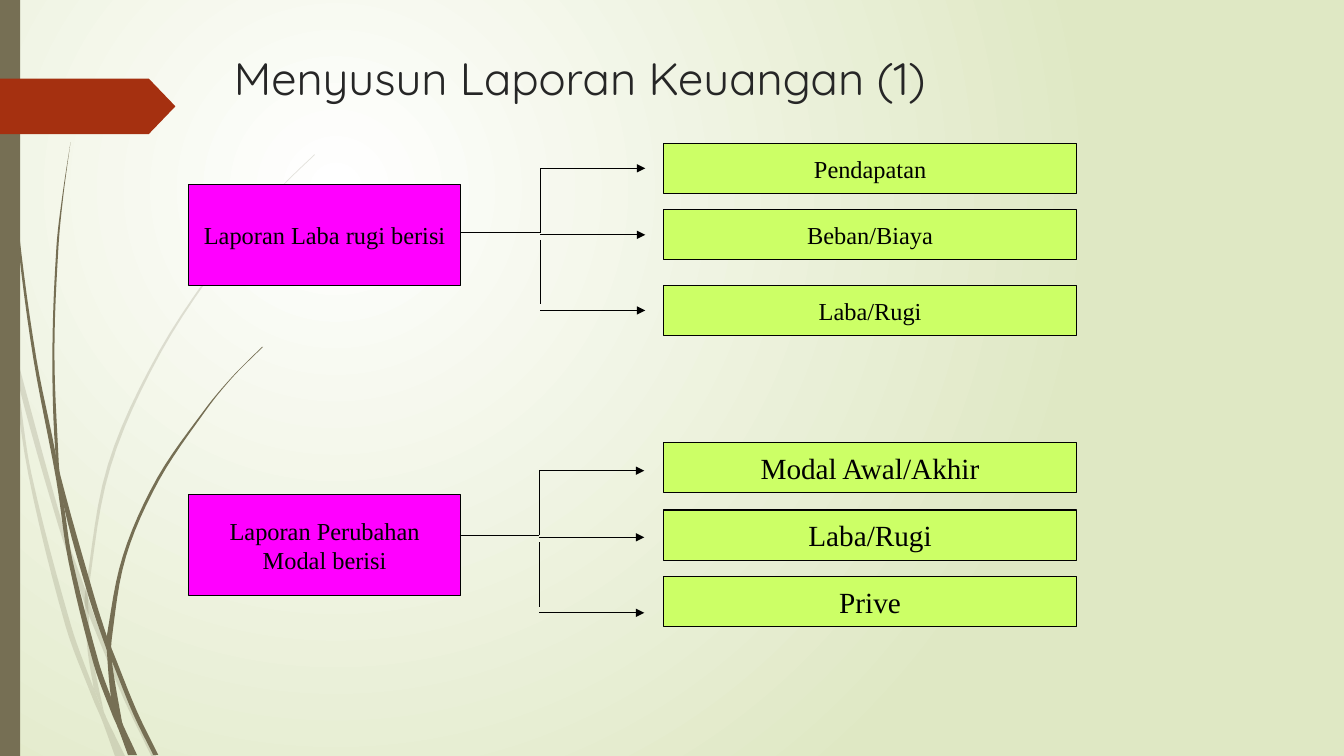
from lxml.etree import SubElement
from pptx import Presentation
from pptx.dml.color import RGBColor
from pptx.enum.shapes import MSO_CONNECTOR, MSO_SHAPE
from pptx.enum.text import MSO_ANCHOR, MSO_AUTO_SIZE, PP_ALIGN
from pptx.oxml.ns import qn
from pptx.util import Inches, Pt

COLORS = {
    "stem": "766F54", "tag": "A53010", "title": "262626", "ink": "000000",
    "report": "FF00FF", "item": "CCFF66", "glow": "FFFFFF", "meadow": "DFE8C4",
}
PALE_STEMS = [
    ([(0, 2.82), (0.09, 3.22), (0.11, 3.5), (0.17, 3.76), (0.31, 4.69), (0.7, 6.19),
      (0.93, 6.83), (1.05, 7.11), (1.24, 7.5)],
     [(0, 2.99), (0.1, 3.44), (0.11, 3.5), (0.28, 4.7), (0.65, 6.21), (0.92, 6.93),
      (1.01, 7.14), (1.14, 7.5)]),
    ([(0.14, 3.45), (0.62, 5.2), (0.85, 5.86), (0.92, 6.07), (1.27, 6.92), (1.55, 7.5)],
     [(0.14, 3.45), (0.17, 3.76), (0.58, 5.22), (0.84, 5.99), (0.88, 6.1), (1.23, 6.94),
      (1.5, 7.5)]),
    ([(3.12, 1.53), (2.89, 1.75), (2.68, 1.97), (2.28, 2.44), (1.58, 3.48), (1.07, 4.61),
      (0.85, 5.84), (0.84, 5.99), (0.87, 6.46), (0.93, 6.83)],
     [(3.12, 1.54), (2.9, 1.75), (2.68, 1.98), (2.29, 2.45), (1.6, 3.49), (1.1, 4.62),
      (0.88, 5.84), (0.88, 6.1), (0.91, 6.46), (1.03, 7.06), (1.05, 7.11)]),
]
DARK_STEMS = [
    ([(0.04, 0), (0.05, 0.48), (0.08, 1.09), (0.19, 2.32), (0.36, 3.55), (0.55, 4.49),
      (0.64, 5.05), (0.72, 5.56), (0.98, 6.57), (1.1, 6.91), (1.22, 7.19), (1.36, 7.49)],
     [(0.03, 0), (0.04, 0.48), (0.07, 1.1), (0.17, 2.33), (0.33, 3.55), (0.56, 4.77),
      (0.68, 5.57), (0.93, 6.59), (1.11, 7.08), (1.17, 7.22), (1.27, 7.49)]),
    ([(0.7, 1.41), (0.62, 1.93), (0.56, 2.45), (0.52, 3.49), (0.55, 4.49), (0.64, 5.05),
      (0.88, 5.92), (1.06, 6.45), (1.11, 6.56), (1.32, 7.08), (1.52, 7.49)],
     [(0.7, 1.41), (0.63, 1.93), (0.58, 2.45), (0.54, 3.49), (0.58, 4.53), (0.6, 4.72),
      (0.93, 5.9), (1.06, 6.31), (1.13, 6.49), (1.36, 7.06), (1.57, 7.49)]),
    ([(2.6, 3.44), (2.31, 3.73), (2.04, 4.05), (1.56, 4.74), (1.22, 5.51), (1.06, 6.31),
      (1.06, 6.45), (1.1, 6.91), (1.17, 7.22)],
     [(2.61, 3.44), (2.31, 3.74), (2.05, 4.06), (1.58, 4.76), (1.25, 5.52), (1.11, 6.33),
      (1.11, 6.56), (1.21, 7.16), (1.22, 7.19)]),
]
FRAME_FORMAT = {
    "auto_size": MSO_AUTO_SIZE.NONE,
    "margin_left": Inches(0.09), "margin_right": Inches(0.09),
    "margin_top": Inches(0.04), "margin_bottom": Inches(0.04),
}


def color(name):
    return RGBColor.from_string(COLORS[name])


def apply(target, values):
    for name, value in values.items():
        setattr(target, name, value)


def write(shape, text, align, font, size, ink, frame):
    apply(shape.text_frame, {**FRAME_FORMAT, **frame})
    para = shape.text_frame.paragraphs[0]
    para.alignment = align
    span = para.add_run()
    span.text = text
    apply(span.font, {"name": font, "size": Pt(size), "bold": False})
    span.font.color.rgb = color(ink)


def paint(shape, fill, outlined=False):
    shape.shadow.inherit = False
    shape.fill.solid()
    shape.fill.fore_color.rgb = color(fill)
    if outlined:
        shape.line.color.rgb = color("ink")
        shape.line.width = Pt(0.75)
    else:
        shape.line.fill.background()


def smooth_edge(points, steps=6):
    last = len(points) - 1
    slopes = []
    for index in range(last + 1):
        (x0, y0), (x1, y1) = points[max(index - 1, 0)], points[min(index + 1, last)]
        slopes.append((x1 - x0) / (y1 - y0))
    curve = []
    for index in range(last):
        (x0, y0), (x1, y1) = points[index], points[index + 1]
        rise = y1 - y0
        for step in range(steps):
            t = step / steps
            x = ((2 * t**3 - 3 * t**2 + 1) * x0 + (3 * t**2 - 2 * t**3) * x1
                 + (t**3 - 2 * t**2 + t) * rise * slopes[index]
                 + (t**3 - t**2) * rise * slopes[index + 1])
            curve.append((Inches(x), Inches(y0 + t * rise)))
    return curve + [(Inches(points[-1][0]), Inches(points[-1][1]))]


def add_stem(page, edges, opacity):
    first, second = map(smooth_edge, edges)
    outline = first + second[::-1]
    builder = page.shapes.build_freeform(*outline[0], scale=1.0)
    builder.add_line_segments(outline[1:], close=True)
    stem = builder.convert_to_shape()
    paint(stem, "stem")
    if opacity < 100:
        shade = stem.fill._xPr.find(".//" + qn("a:srgbClr"))
        SubElement(shade, qn("a:alpha"), val=str(opacity * 1000))


def add_backdrop(page):
    fill = page.background.fill
    fill.gradient()
    for stop, name, position in zip(fill.gradient_stops, ("glow", "meadow"), (0, 1)):
        stop.color.rgb = color(name)
        stop.position = position
    gradient = page.element.find(".//" + qn("a:gradFill"))
    gradient.remove(gradient.find(qn("a:lin")))
    circle = SubElement(gradient, qn("a:path"), path="circle")
    SubElement(circle, qn("a:fillToRect"), l="50000", t="50000", r="100000", b="100000")


def add_side_decoration(page, height):
    for stems, opacity in ((PALE_STEMS, 20), (DARK_STEMS, 100)):
        for edges in stems:
            add_stem(page, edges, opacity)
    bar = page.shapes.add_shape(MSO_SHAPE.RECTANGLE, 0, 0, Inches(0.2), height)
    paint(bar, "stem")
    tag = page.shapes.add_shape(MSO_SHAPE.PENTAGON, 0, Inches(0.78), Inches(1.74), Inches(0.55))
    tag.adjustments[0] = 0.48
    paint(tag, "tag")


def add_title(page, text, left, top, width, height):
    title = page.shapes.title
    apply(title, {"left": Inches(left), "top": Inches(top),
                  "width": Inches(width), "height": Inches(height)})
    write(title, text, PP_ALIGN.LEFT, "Quicksand", 32.4, "title",
          {"vertical_anchor": MSO_ANCHOR.TOP, "word_wrap": True,
           "margin_left": Inches(0.1), "margin_top": Inches(0.05)})


def add_box(page, text, fill, size, left, top, width, height, wrap=False):
    box = page.shapes.add_shape(MSO_SHAPE.RECTANGLE, Inches(left), Inches(top),
                                Inches(width), Inches(height))
    paint(box, fill, outlined=True)
    write(box, text, PP_ALIGN.CENTER, "Times New Roman", size, "ink",
          {"vertical_anchor": MSO_ANCHOR.MIDDLE, "word_wrap": wrap})


def add_line(page, x0, y0, x1, y1, arrow=False):
    line = page.shapes.add_connector(MSO_CONNECTOR.STRAIGHT, Inches(x0), Inches(y0),
                                     Inches(x1), Inches(y1))
    line.line.color.rgb = color("ink")
    line.line.width = Pt(0.75)
    if arrow:
        SubElement(line.line._get_or_add_ln(), qn("a:tailEnd"), type="triangle")
    SubElement(line._element.spPr, qn("a:effectLst"))


def add_branches(page, left, top):
    fork = left + 0.79
    add_line(page, left, top, fork, top)
    for start, end in ((-0.64, 0), (0.07, 0.71)):
        add_line(page, fork, top + start, fork, top + end)
    for offset in (-0.64, 0.02, 0.77):
        add_line(page, fork, top + offset, fork + 1.04, top + offset, arrow=True)


def add_report(page, left, top, report, wrap, items, item_size, branches):
    add_box(page, report, "report", 17.4, left, top, 2.7, 1, wrap)
    for text, offset in items:
        add_box(page, text, "item", item_size, left + 4.71, top + offset, 4.1, 0.5)
    add_branches(page, left + branches[0], top + branches[1])


def main():
    deck = Presentation()
    apply(deck, {"slide_width": Inches(13.33), "slide_height": Inches(7.5)})
    page = deck.slides.add_slide(deck.slide_layouts[5])
    add_backdrop(page)
    add_side_decoration(page, deck.slide_height)
    add_title(page, "Menyusun Laporan Keuangan (1)", 2.22, 0.45, 9.39, 0.25)
    add_report(page, 1.87, 1.83, "Laporan Laba rugi berisi", False,
               [("Pendapatan", -0.41), ("Beban/Biaya", 0.25), ("Laba/Rugi", 1)],
               17.4, (2.7, 0.48))
    add_report(page, 1.87, 4.91, "Laporan Perubahan Modal berisi", True,
               [("Modal Awal/Akhir", -0.52), ("Laba/Rugi", 0.15), ("Prive", 0.81)],
               20.9, (2.69, 0.4))
    deck.save("out.pptx")


if __name__ == "__main__":
    main()
